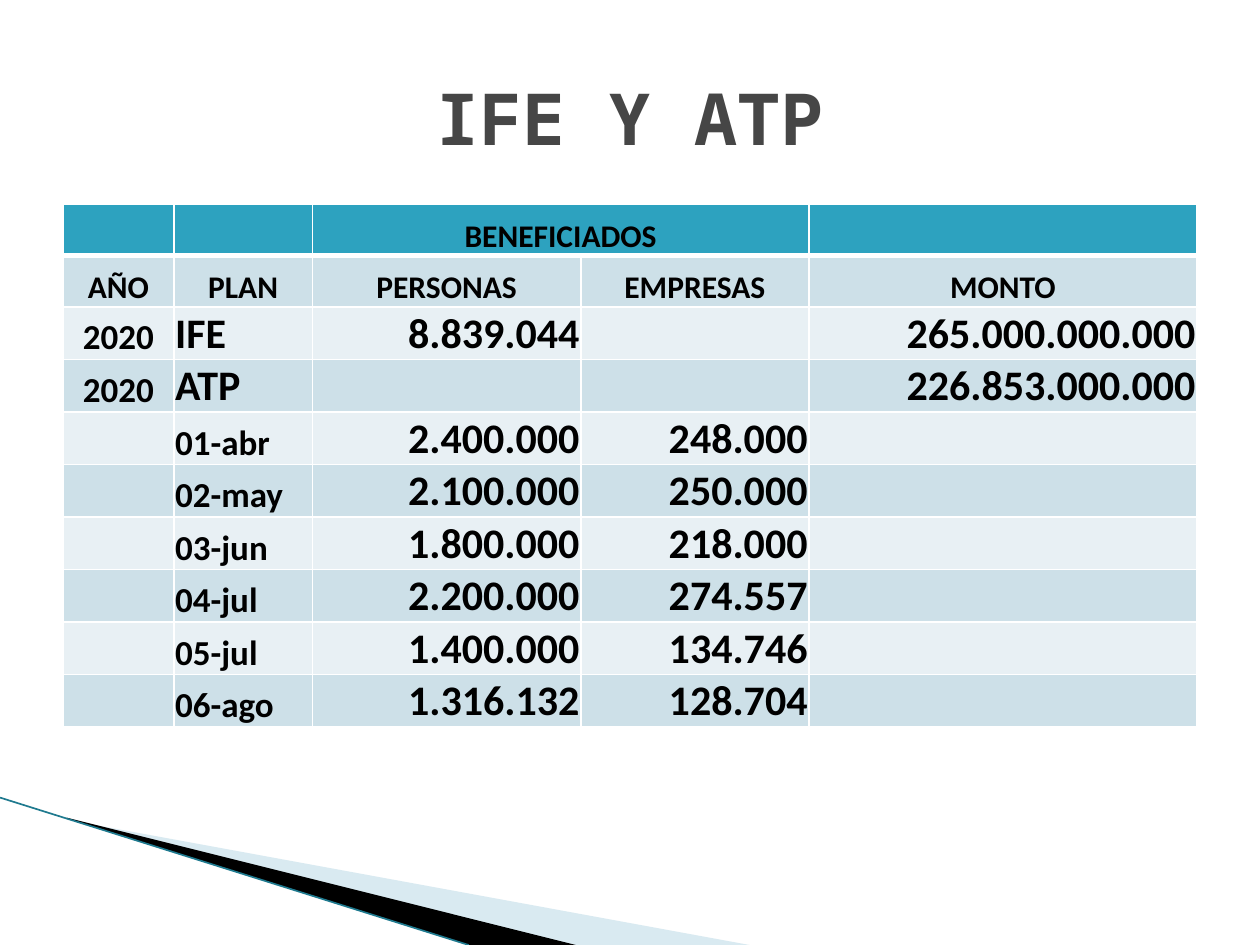
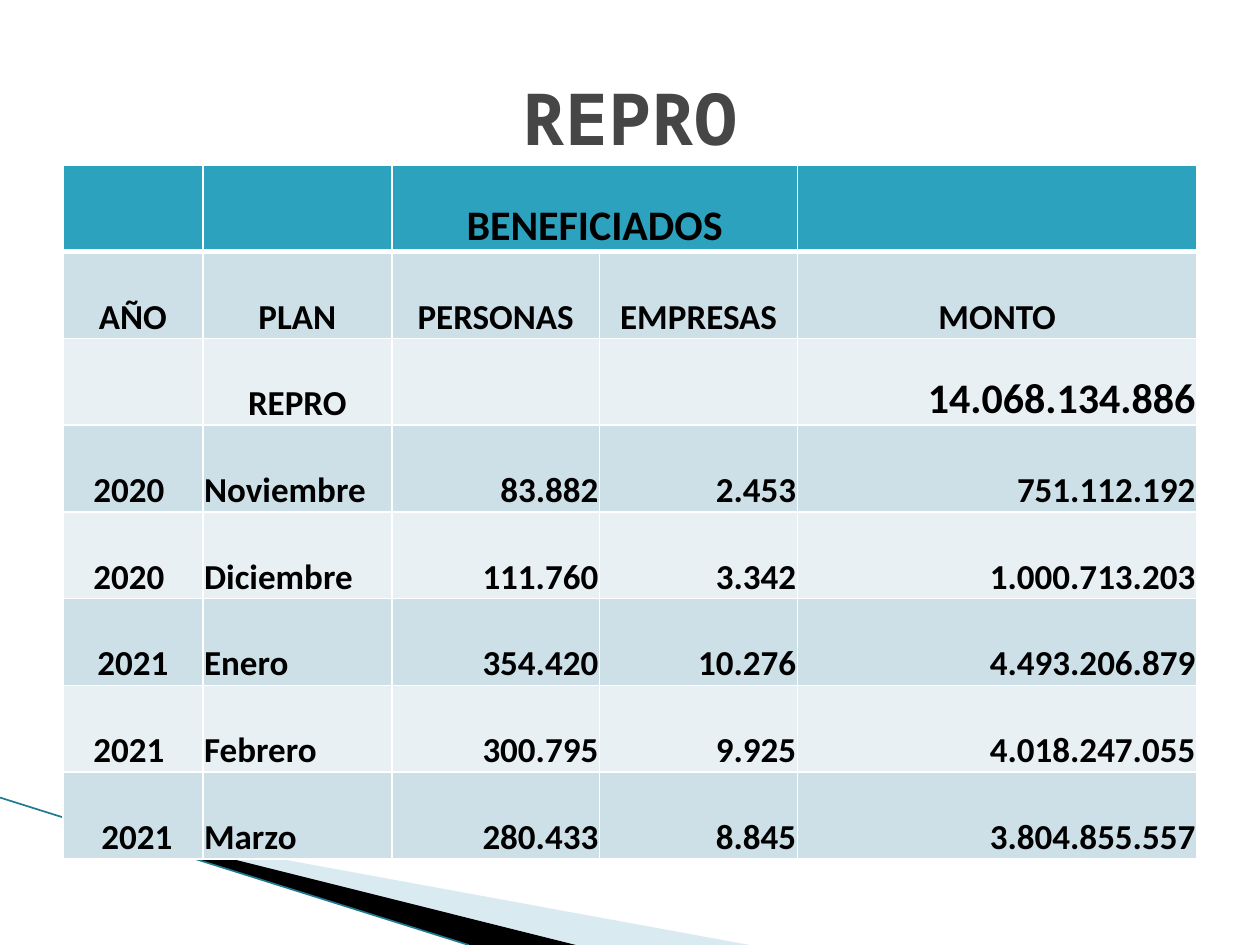
import pptx
import pptx.util
import pptx.dml.color
import pptx.enum.shapes
import pptx.enum.text
import lxml.etree
from pptx.oxml.ns import qn

COLOURS = {
    "title": "464646", "text": "000000", "header": "2DA2BF",
    "band_dark": "CDE0E8", "band_light": "E8F0F4", "border": "FFFFFF",
    "wedge_light": "A0CBDC", "wedge_dark": "000000", "edge": "1F7A8F",
}
TITLE_FONT, TABLE_FONT = "Noto Sans Mono", "Calibri"
ALIGN = pptx.enum.text.PP_ALIGN
ANCHOR = pptx.enum.text.MSO_ANCHOR

presentation = pptx.Presentation()
presentation.slide_width = pptx.util.Inches(10)
presentation.slide_height = pptx.util.Inches(7.5)

# Lengths are percentages of the slide's width and height
column_unit = presentation.slide_width / 100
row_unit = presentation.slide_height / 100
LEFT, WIDTH = 5, 90

WEDGES = [
    ("wedge_light", 40, [(5.5, 86.8), (59.5, 100), (45.6, 100), (5.5, 86.67)]),
    ("wedge_dark", 100, [(5.3, 86.53), (45.7, 100), (37.2, 100), (5.4, 86.67)]),
]
HEADINGS = [
    ["", "", "BENEFICIADOS", "", ""],
    ["AÑO", "PLAN", "PERSONAS", "EMPRESAS", "MONTO"],
]
COLUMN_ALIGNMENT = [ALIGN.CENTER, ALIGN.LEFT, ALIGN.RIGHT, ALIGN.RIGHT, ALIGN.RIGHT]

# Sizes: two heading rows, then one per column; "exceptions" are cells apart
SLIDES = [
    {
        "title": "IFE Y ATP", "top": 21.6, "row_height": 5.44,
        "columns": [8.8, 11, 21.3, 18.1, 30.8],
        "heading_sizes": [18, 18], "column_sizes": [20, 20, 24, 24, 24],
        "exceptions": {(2, 1): (24, ALIGN.LEFT), (3, 1): (24, ALIGN.LEFT)},
        "rows": [
            ["2020", "IFE", "8.839.044", "", "265.000.000.000"],
            ["2020", "ATP", "", "", "226.853.000.000"],
            ["", "01-abr", "2.400.000", "248.000", ""],
            ["", "02-may", "2.100.000", "250.000", ""],
            ["", "03-jun", "1.800.000", "218.000", ""],
            ["", "04-jul", "2.200.000", "274.557", ""],
            ["", "05-jul", "1.400.000", "134.746", ""],
            ["", "06-ago", "1.316.132", "128.704", ""],
        ],
    },
    {
        "title": "REPRO", "top": 17.47, "row_height": 9.18,
        "columns": [11.1, 15, 16.5, 15.7, 31.7],
        "heading_sizes": [24, 20], "column_sizes": [20] * 5,
        "exceptions": {(2, 1): (20, ALIGN.CENTER), (2, 4): (24, ALIGN.RIGHT)},
        "rows": [
            ["", "REPRO", "", "", "14.068.134.886"],
            ["2020 ", "Noviembre", "83.882", "2.453", "751.112.192"],
            ["2020 ", "Diciembre", "111.760", "3.342", "1.000.713.203"],
            ["2021", "Enero", "354.420", "10.276", "4.493.206.879"],
            ["2021 ", "Febrero", "300.795", "9.925", "4.018.247.055"],
            [" 2021", "Marzo", "280.433", "8.845", "3.804.855.557"],
        ],
    },
]


def write(paragraph, text, size, font, colour, alignment):
    paragraph.alignment = alignment
    run = paragraph.add_run()
    run.text = text
    run.font.size = pptx.util.Pt(size)
    run.font.name = font
    run.font.bold = True
    run.font.color.rgb = pptx.dml.color.RGBColor.from_string(COLOURS[colour])


def style_cell(cell, fill, top_width, bottom_width):
    cell.fill.solid()
    cell.fill.fore_color.rgb = pptx.dml.color.RGBColor.from_string(COLOURS[fill])
    cell.vertical_anchor = ANCHOR.BOTTOM
    cell.margin_left = cell.margin_right = cell.margin_top = pptx.util.Inches(0.01)
    cell.margin_bottom = 0
    properties = cell._tc.get_or_add_tcPr()
    sides = [("lnL", 1), ("lnR", 1), ("lnT", top_width), ("lnB", bottom_width)]
    for position, (side, width) in enumerate(sides):
        line = lxml.etree.Element(qn("a:" + side), w=str(pptx.util.Pt(width)))
        solid = lxml.etree.SubElement(line, qn("a:solidFill"))
        lxml.etree.SubElement(solid, qn("a:srgbClr"), val=COLOURS["border"])
        properties.insert(position, line)


for content in SLIDES:
    slide = presentation.slides.add_slide(presentation.slide_layouts[6])

    # Wedges in the bottom left corner
    for colour, opacity, points in WEDGES:
        corners = [(x * column_unit, y * row_unit) for x, y in points]
        builder = slide.shapes.build_freeform(*corners[0])
        builder.add_line_segments(corners[1:], close=True)
        wedge = builder.convert_to_shape()
        wedge.shadow.inherit = False
        wedge.line.fill.background()
        wedge.fill.solid()
        wedge.fill.fore_color.rgb = pptx.dml.color.RGBColor.from_string(COLOURS[colour])
        if opacity < 100:
            colour_element = wedge._element.spPr.find(".//" + qn("a:srgbClr"))
            lxml.etree.SubElement(colour_element, qn("a:alpha"), val=str(opacity * 1000))

    # Thin edge along the wedges
    edge = slide.shapes.add_connector(
        pptx.enum.shapes.MSO_CONNECTOR.STRAIGHT,
        0, int(84.4 * row_unit), int(37.2 * column_unit), int(100 * row_unit))
    edge.line.width = pptx.util.Pt(0.95)
    edge.line.color.rgb = pptx.dml.color.RGBColor.from_string(COLOURS["edge"])
    lxml.etree.SubElement(edge._element.spPr, qn("a:effectLst"))

    # Table
    rows = HEADINGS + content["rows"]
    table = slide.shapes.add_table(
        len(rows), len(content["columns"]),
        int(LEFT * column_unit), int(content["top"] * row_unit),
        int(WIDTH * column_unit),
        int(len(rows) * content["row_height"] * row_unit)).table
    table.horz_banding = False
    for column, width in zip(table.columns, content["columns"]):
        column.width = int(width * column_unit)
    for row_index, texts in enumerate(rows):
        table.rows[row_index].height = int(content["row_height"] * row_unit)
        if row_index == 0:
            fill = "header"
        else:
            fill = "band_dark" if row_index % 2 else "band_light"
        for column_index, text in enumerate(texts):
            cell = table.cell(row_index, column_index)
            style_cell(cell, fill, 3 if row_index == 1 else 1, 3 if row_index == 0 else 1)
            if not text:
                continue
            if row_index < len(HEADINGS):
                size, alignment = content["heading_sizes"][row_index], ALIGN.CENTER
            else:
                size, alignment = content["exceptions"].get(
                    (row_index, column_index),
                    (content["column_sizes"][column_index], COLUMN_ALIGNMENT[column_index]))
            write(cell.text_frame.paragraphs[0], text, size, TABLE_FONT, "text", alignment)
    table.cell(0, 2).merge(table.cell(0, 3))

    # Title
    title = slide.shapes.add_textbox(
        int(LEFT * column_unit), int(4 * row_unit),
        int(WIDTH * column_unit), int(16.67 * row_unit))
    title.text_frame.word_wrap = True
    title.text_frame.vertical_anchor = ANCHOR.MIDDLE
    write(title.text_frame.paragraphs[0], content["title"], 41, TITLE_FONT, "title", ALIGN.CENTER)

presentation.save("out.pptx")
